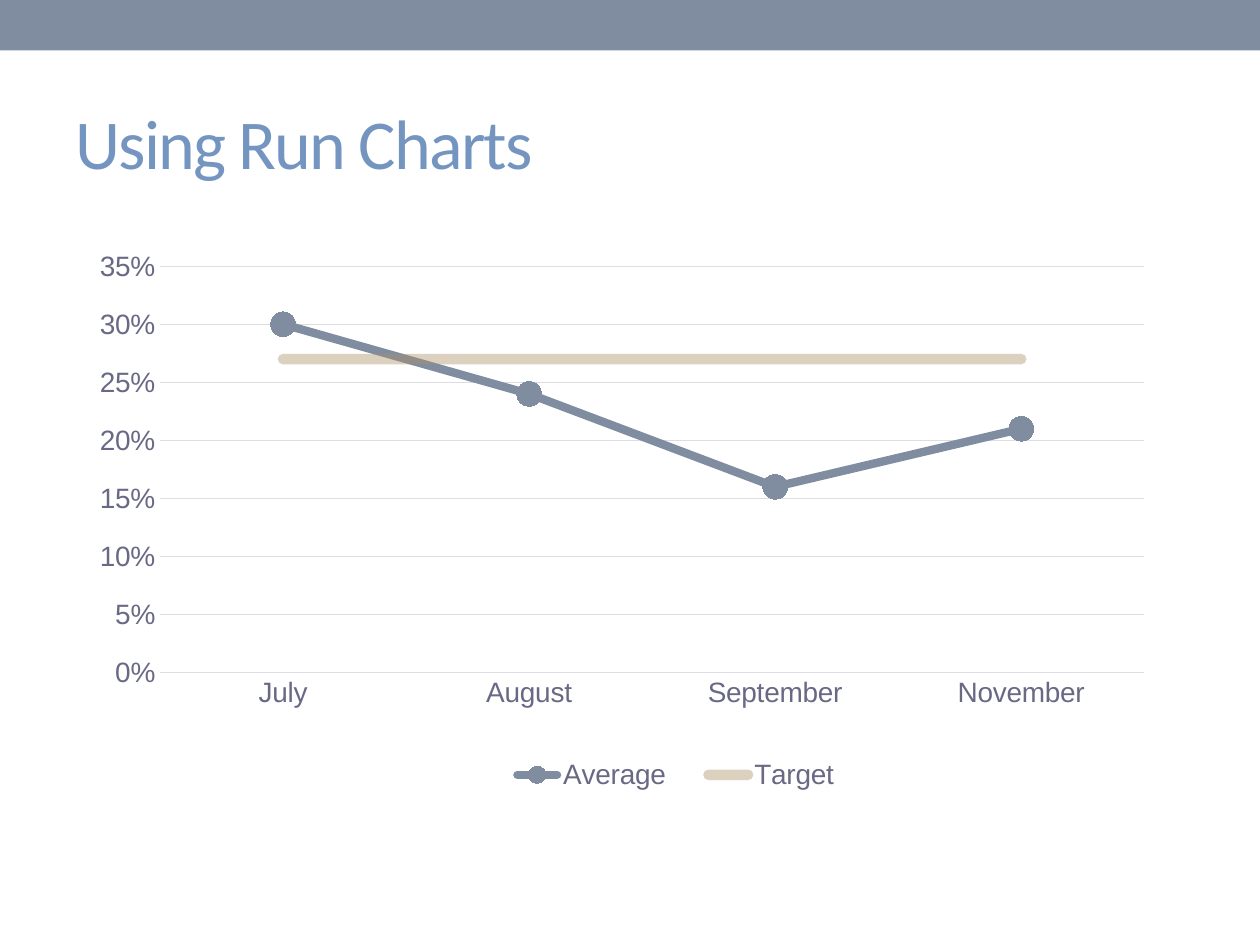
from lxml import etree
from pptx import Presentation
from pptx.chart.data import CategoryChartData
from pptx.dml.color import RGBColor
from pptx.enum import chart as ch, shapes, text
from pptx.oxml import ns
from pptx.util import Inches, Pt

HEX = {"slate": "808DA0", "title": "7595C1", "tan": "AD8F67",
       "label": "696986", "grid": "DCDCE3", "ink": "292934"}


def rgb(name):
    return RGBColor.from_string(HEX[name])


def add_bar(slide, box, color):
    bar = slide.shapes.add_shape(shapes.MSO_SHAPE.RECTANGLE, *map(Inches, box))
    bar.shadow.inherit = False
    bar.fill.solid()
    bar.fill.fore_color.rgb = rgb(color)
    bar.line.fill.background()


def set_font(font, face, size, color):
    font.name = face
    font.size = Pt(size)
    font.color.rgb = rgb(color)


def add_text(slide, box, words, face="Calibri", size=18, color="ink", gap=0):
    """Add one line of text; gap is the letter spacing in points."""
    frame = slide.shapes.add_textbox(*map(Inches, box)).text_frame
    frame.word_wrap = True
    frame.vertical_anchor = text.MSO_ANCHOR.MIDDLE
    run = frame.paragraphs[0].add_run()
    run.text = words
    set_font(run.font, face, size, color)
    run.font._element.set("spc", str(round(gap * 100)))


def set_line(line, color, width):
    line.color.rgb = rgb(color)
    line.width = Pt(width)


def make_layout(box, inner=False):
    """Return a manual chart layout, in fractions of the chart."""
    layout = etree.Element(ns.qn("c:layout"))
    manual = etree.SubElement(layout, ns.qn("c:manualLayout"))
    parts = [("layoutTarget", "inner")] if inner else []
    parts += [("xMode", "edge"), ("yMode", "edge"), *zip("xywh", box)]
    for tag, val in parts:
        etree.SubElement(manual, ns.qn(f"c:{tag}")).set("val", str(val))
    return layout


def style_axis(axis):
    axis.major_tick_mark = axis.minor_tick_mark = ch.XL_TICK_MARK.NONE
    set_font(axis.tick_labels.font, "Arial", 16, "label")


def style_line(line, color, width, alpha=100):
    line.smooth = False
    set_line(line.format.line, color, width)
    stroke = line.format.line._ln
    stroke.set("cap", "rnd")
    etree.SubElement(stroke, ns.qn("a:round"))
    if alpha < 100:
        fill = stroke.find(".//" + ns.qn("a:srgbClr"))
        etree.SubElement(fill, ns.qn("a:alpha")).set("val", str(alpha * 1000))


def add_run_chart(slide, box, months, series):
    data = CategoryChartData(number_format="0%")
    data.categories = months
    for name, vals in series.items():
        data.add_series(name, vals)
    chart = slide.shapes.add_chart(
        ch.XL_CHART_TYPE.LINE_MARKERS, *map(Inches, box), data).chart
    chart.has_title = False
    set_font(chart.font, "Arial", 16, "ink")

    for axis in (chart.category_axis, chart.value_axis):
        style_axis(axis)
    set_line(chart.category_axis.format.line, "grid", 0.75)
    scale = chart.value_axis
    scale.minimum_scale, scale.maximum_scale, scale.major_unit = 0, 0.35, 0.05
    scale.format.line.fill.background()
    set_line(scale.major_gridlines.format.line, "grid", 0.75)
    scale.tick_labels.number_format = "0%"
    scale.tick_labels.number_format_is_linked = False

    plot = chart.plots[0]
    plot.vary_by_categories = False
    average, target = plot.series
    style_line(average, "slate", 4.75)
    style_line(target, "tan", 6, alpha=41)
    dot = average.marker
    dot.style, dot.size = ch.XL_MARKER_STYLE.CIRCLE, 14
    dot.format.fill.solid()
    dot.format.fill.fore_color.rgb = rgb("slate")
    dot.format.line.fill.background()
    target.marker.style = ch.XL_MARKER_STYLE.NONE

    chart.has_legend = True
    legend = chart.legend
    legend.position = ch.XL_LEGEND_POSITION.BOTTOM
    legend.include_in_layout = False
    set_font(legend.font, "Arial", 16, "label")

    area = chart._chartSpace.chart.plotArea
    for root in (area, legend._element):
        for old in root.findall(ns.qn("c:layout")):
            root.remove(old)
    area.insert(0, make_layout((0.084, 0.043, 0.899, 0.717), inner=True))
    legend._element.insert(1, make_layout((0.38, 0.89, 0.35, 0.1)))


def main():
    deck = Presentation()
    deck.slide_width, deck.slide_height = Inches(10), Inches(7.5)
    slide = deck.slides.add_slide(deck.slide_layouts[6])
    add_bar(slide, (0, 0, 10, 0.4), "slate")
    add_text(slide, (0.5, 0.58, 9, 1.08), "Using Run Charts",
             size=40, color="title", gap=-1)
    add_run_chart(slide, (0.54, 1.92, 8.69, 4.5),
                  ["July", "August", "September", "November"],
                  {"Average": [0.3, 0.24, 0.16, 0.21], "Target": [0.27] * 4})
    deck.save("out.pptx")


if __name__ == "__main__":
    main()
